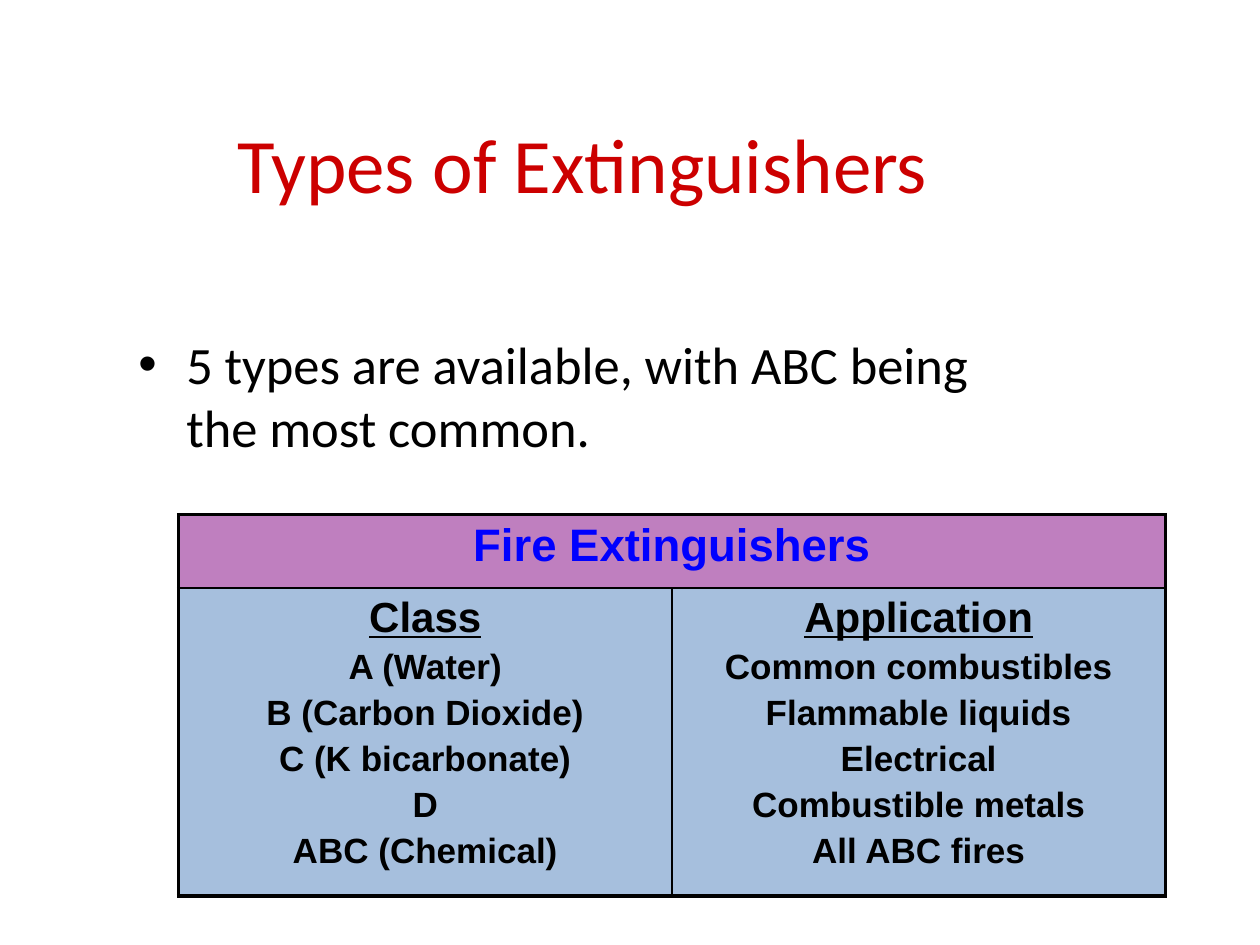
from lxml.etree import SubElement
from pptx import Presentation
from pptx.dml.color import RGBColor
from pptx.enum.text import MSO_ANCHOR, PP_ALIGN
from pptx.oxml import parse_xml
from pptx.oxml.ns import nsdecls, qn
from pptx.util import Inches, Pt

RED = RGBColor(0xCC, 0x00, 0x00)
BLACK = RGBColor(0x00, 0x00, 0x00)
BLUE = RGBColor(0x00, 0x00, 0xFF)
PURPLE = RGBColor(0x80, 0x00, 0x80)
STEEL = RGBColor(0x4F, 0x81, 0xBD)

GRID = Inches(1) / 12
COLUMNS, ROWS = 120, 90
TITLE_BOX = (12, 10.5, 87, 10)
BODY_BOX = (12, 31, 87, 21)
TABLE_BOX = (17, 49, 94, 37)
ROW_HEIGHTS = (7, 21)
THICK, THIN = 2.25, 1

TITLE_FONT = {"name": "Calibri", "size": Pt(44)}
BODY_FONT = {"name": "Calibri", "size": Pt(30)}
CAPTION_FONT = {"name": "Arial", "size": Pt(26), "bold": True}
HEADING_FONT = {"name": "Arial", "size": Pt(24), "bold": True, "underline": True}
ENTRY_FONT = {"name": "Arial", "size": Pt(20), "bold": True}

CLASSES = ("Class", "A (Water)", "B (Carbon Dioxide)", "C (K bicarbonate)",
           "D", "ABC (Chemical)")
APPLICATIONS = ("Application", "Common combustibles", "Flammable liquids",
                "Electrical", "Combustible metals", "All ABC fires")


def grid(*cells):
    """Turn grid counts into lengths."""
    return [round(count * GRID) for count in cells]


def write(para, text, font, color):
    """Add one formatted span to a paragraph."""
    span = para.add_run()
    span.text = text
    for name, value in font.items():
        setattr(span.font, name, value)
    span.font.color.rgb = color


def space_before(para):
    """Put a fifth of a line above a paragraph."""
    spacing = SubElement(para._p.get_or_add_pPr(), qn("a:spcBef"))
    SubElement(spacing, qn("a:spcPct"), val="20000")


def add_title(page, box):
    """Place the centred slide title."""
    frame = page.shapes.add_textbox(*grid(*box)).text_frame
    frame.word_wrap = True
    frame.vertical_anchor = MSO_ANCHOR.MIDDLE
    para = frame.paragraphs[0]
    para.alignment = PP_ALIGN.CENTER
    write(para, "Types of Extinguishers", TITLE_FONT, RED)


def add_body(page, box):
    """Place the bulleted statement."""
    frame = page.shapes.add_textbox(*grid(*box)).text_frame
    frame.word_wrap = True
    para = frame.paragraphs[0]
    space_before(para)
    properties = para._p.get_or_add_pPr()
    indent = Inches(0.38)
    for name, value in {"marL": indent, "indent": -indent}.items():
        properties.set(name, str(value))
    SubElement(properties, qn("a:buFont"), typeface="Arial")
    SubElement(properties, qn("a:buChar"), char="•")
    write(para, "5 types are available, with ABC being the most common.",
          BODY_FONT, BLACK)


def style_cell(cell, color, borders):
    """Give a cell a half-transparent fill and left, right, top, bottom borders."""
    cell.fill.solid()
    cell.fill.fore_color.rgb = color
    properties = cell._tc.get_or_add_tcPr()
    tint = properties.find(f"{qn('a:solidFill')}/{qn('a:srgbClr')}")
    SubElement(tint, qn("a:alpha"), val="50000")
    for position, (side, width) in enumerate(zip("LRTB", borders)):
        properties.insert(position, parse_xml(
            f'<a:ln{side} {nsdecls("a")} w="{Pt(width)}"><a:solidFill>'
            f'<a:srgbClr val="{BLACK}"/></a:solidFill></a:ln{side}>'))


def fill_cell(cell, lines, fonts, color):
    """Write centred lines into a cell, one paragraph each."""
    frame = cell.text_frame
    for number, (text, font) in enumerate(zip(lines, fonts)):
        para = frame.add_paragraph() if number else frame.paragraphs[0]
        para.alignment = PP_ALIGN.CENTER
        space_before(para)
        write(para, text, font, color)


def add_extinguisher_table(page, box):
    """Place the table of extinguisher classes and applications."""
    holder = page.shapes.add_table(2, 2, *grid(*box))
    table = holder.table
    table.first_row = table.horz_banding = False
    for row, height in zip(table.rows, grid(*ROW_HEIGHTS)):
        row.height = height
    holder.height = grid(box[3])[0]
    caption = table.cell(0, 0)
    caption.merge(table.cell(0, 1))
    fill_cell(caption, ["Fire Extinguishers"], [CAPTION_FONT], BLUE)
    for column, lines in enumerate((CLASSES, APPLICATIONS)):
        style_cell(table.cell(0, column), PURPLE, (THICK, THICK, THICK, THIN))
        sides = (THIN, THICK) if column else (THICK, THIN)
        cell = table.cell(1, column)
        style_cell(cell, STEEL, (*sides, THIN, THICK))
        fonts = [HEADING_FONT] + [ENTRY_FONT] * (len(lines) - 1)
        fill_cell(cell, lines, fonts, BLACK)


def main():
    """Build the deck and save it."""
    deck = Presentation()
    deck.slide_width, deck.slide_height = grid(COLUMNS, ROWS)
    page = deck.slides.add_slide(deck.slide_layouts[6])
    add_title(page, TITLE_BOX)
    add_body(page, BODY_BOX)
    add_extinguisher_table(page, TABLE_BOX)
    deck.save("out.pptx")


if __name__ == "__main__":
    main()
